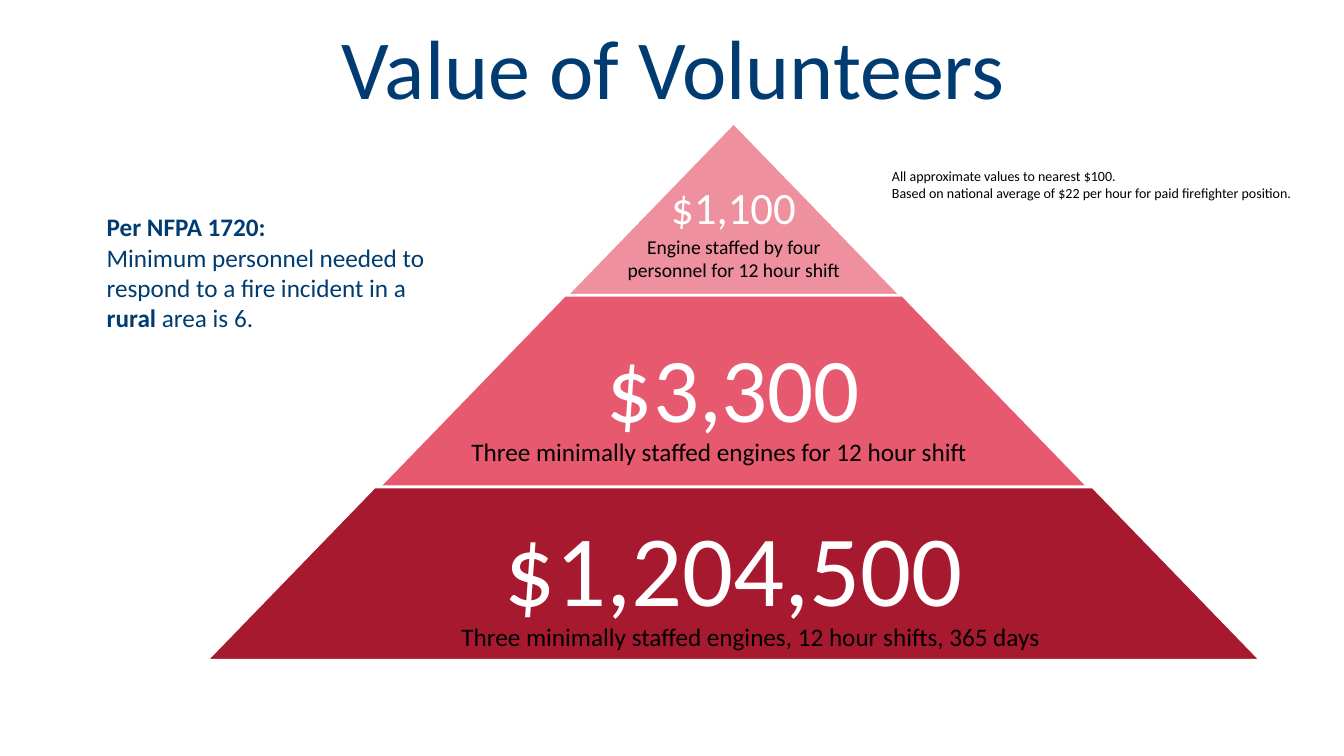
"""Build the slide that prices volunteer staffing as a three-tier pyramid."""
from pptx import Presentation
from pptx.dml.color import RGBColor
from pptx.enum.shapes import MSO_SHAPE as Shape
from pptx.enum.text import MSO_ANCHOR as Anchor, MSO_AUTO_SIZE as AutoSize, PP_ALIGN as Align
from pptx.util import Cm, Pt

NAVY, WHITE, BLACK = "003C71", "FFFFFF", "000000"
PYRAMID_CENTER = 18.49
PYRAMID_SLOPE = 0.969


def color(hex_code):
    return RGBColor.from_string(hex_code)


def style(paragraph, size, hex_code, align=Align.LEFT, spacing=1.0):
    paragraph.alignment = align
    paragraph.line_spacing = spacing
    paragraph.font.name = "Calibri"
    paragraph.font.size = Pt(size)
    paragraph.font.color.rgb = color(hex_code)


deck = Presentation()
deck.slide_width, deck.slide_height = Cm(33.87), Cm(19.05)
slide = deck.slides.add_slide(deck.slide_layouts[5])

title = slide.shapes.title
title.left, title.top, title.width, title.height = Cm(3), Cm(0.2), Cm(27.94), Cm(2.9)
title.text_frame.text = "Value of Volunteers"
title.text_frame.vertical_anchor = Anchor.BOTTOM
title.text_frame.auto_size = AutoSize.NONE
style(title.text_frame.paragraphs[0], 60, NAVY, Align.CENTER, 0.9)

# amount, size, fill, top, height, tier width, amount width, margin
tiers = [
    ("$1,100", 32, "EE909E", 3.1, 4.37, 8.48, 8.48, 0.1),
    ("$3,300", 65, "E6596E", 7.44, 4.95, 18.11, 11.76, 0.23),
    ("$1,204,500", 72, "A6192E", 12.27, 4.37, 26.57, 17.27, 0.25),
]
for amount, size, fill, top, height, tier_width, amount_width, margin in tiers:
    tier = slide.shapes.add_shape(Shape.TRAPEZOID, Cm(PYRAMID_CENTER - tier_width / 2),
                                  Cm(top), Cm(tier_width), Cm(height))
    tier.adjustments[0] = PYRAMID_SLOPE
    tier.shadow.inherit = False
    tier.fill.solid()
    tier.fill.fore_color.rgb = color(fill)
    tier.line.color.rgb = color(WHITE)
    tier.line.width = Pt(2)

    amount_box = slide.shapes.add_textbox(Cm(PYRAMID_CENTER - amount_width / 2),
                                          Cm(top), Cm(amount_width), Cm(height))
    frame = amount_box.text_frame
    frame.word_wrap = True
    frame.vertical_anchor = Anchor.MIDDLE
    frame.margin_left = frame.margin_right = Cm(margin)
    frame.margin_top = frame.margin_bottom = Cm(margin)
    frame.text = amount
    style(frame.paragraphs[0], size, WHITE, Align.CENTER, 0.9)

# left, top, width, height, size, colour, alignment, paragraphs of (text, bold) runs
captions = [
    (15.09, 5.79, 6.81, 1.45, 14, BLACK, Align.CENTER,
     [[("Engine staffed by four personnel for 12 hour shift", False)]]),
    (11.63, 10.87, 15.16, 1.02, 18, BLACK, Align.LEFT,
     [[("Three minimally staffed engines for 12 hour shift", False)]]),
    (11.38, 15.54, 17.25, 1.02, 18, BLACK, Align.LEFT,
     [[("Three minimally staffed engines, 12 hour shifts, 365 days", False)]]),
    (22.23, 4.09, 11.5, 1.12, 10, BLACK, Align.LEFT,
     [[("All approximate values to nearest $100.", False)],
      [("Based on national average of $22 per hour for paid firefighter position.", False)]]),
    (2.44, 5.21, 9.19, 4.11, 18, NAVY, Align.LEFT,
     [[("Per NFPA 1720:", True)],
      [("Minimum personnel needed to respond to a fire incident in a", False)],
      [("rural", True), (" area is 6.", False)]]),
]
for left, top, width, height, size, hex_code, align, lines in captions:
    caption = slide.shapes.add_textbox(Cm(left), Cm(top), Cm(width), Cm(height))
    frame = caption.text_frame
    frame.word_wrap = True
    frame.auto_size = AutoSize.SHAPE_TO_FIT_TEXT
    for index, line in enumerate(lines):
        paragraph = frame.add_paragraph() if index else frame.paragraphs[0]
        style(paragraph, size, hex_code, align)
        for text, bold in line:
            run = paragraph.add_run()
            run.text = text
            if bold:
                run.font.bold = True

deck.save("out.pptx")
